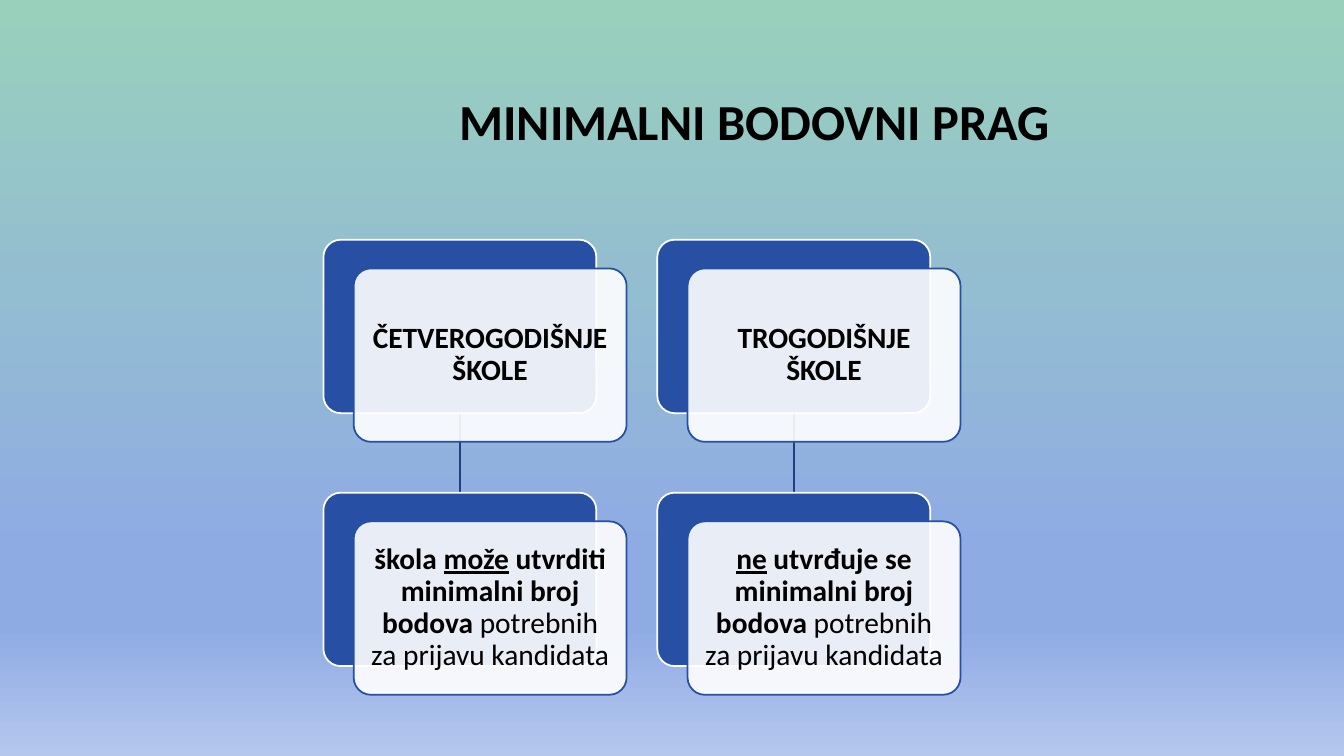
import copy
from dataclasses import dataclass

import pptx
import pptx.dml.color
import pptx.enum.shapes
import pptx.enum.text
import pptx.oxml
import pptx.oxml.ns
import pptx.util

Pt = pptx.util.Pt


@dataclass(frozen=True)
class Theme:
    font: str = "Calibri"
    title_size: float = 36
    card_size: float = 21
    line_width: float = 1.25
    text: str = "000000"
    blue: str = "274FA4"
    link: str = "1F3F83"
    white: str = "FFFFFF"
    front_opacity: int = 90
    background: tuple = ((0, "98D0BC"), (0.74, "8FABE4"), (0.83, "8FABE4"), (1, "B5C7ED"))


THEME = Theme()

BOLD = {"bold": True}
UNDERLINED = {"bold": True, "underline": True}
REQUIREMENT = [("potrebnih za prijavu kandidata", {})]
COLUMNS = [
    (
        [("ČETVEROGODIŠNJE ŠKOLE", BOLD)],
        [("škola ", BOLD), ("može", UNDERLINED),
         (" utvrditi minimalni broj bodova ", BOLD)] + REQUIREMENT,
    ),
    (
        [("TROGODIŠNJE ŠKOLE", BOLD)],
        [("ne", UNDERLINED),
         (" utvrđuje se minimalni broj bodova ", BOLD)] + REQUIREMENT,
    ),
]


def rgb(value):
    return pptx.dml.color.RGBColor.from_string(value)


def write_text(shape, runs, size, margin):
    frame = shape.text_frame
    frame.word_wrap = True
    frame.auto_size = pptx.enum.text.MSO_AUTO_SIZE.NONE
    frame.vertical_anchor = pptx.enum.text.MSO_ANCHOR.MIDDLE
    frame.margin_left = frame.margin_right = Pt(margin)
    frame.margin_top = frame.margin_bottom = Pt(margin)
    paragraph = frame.paragraphs[0]
    paragraph.alignment = pptx.enum.text.PP_ALIGN.CENTER
    paragraph.line_spacing = 0.9
    paragraph.space_before = Pt(0)
    for text, style in runs:
        run = paragraph.add_run()
        run.text = text
        run.font.name = THEME.font
        run.font.size = Pt(size)
        run.font.color.rgb = rgb(THEME.text)
        run.font.bold = style.get("bold", False)
        run.font.underline = style.get("underline", False)


def paint_background(slide):
    fill = slide.background.fill
    fill.gradient()
    fill.gradient_angle = 270
    stop_list = slide.element.xpath(".//a:gsLst")[0]
    while len(stop_list) < len(THEME.background):
        stop_list.append(copy.deepcopy(stop_list[0]))
    for stop, (position, color) in zip(fill.gradient_stops, THEME.background):
        stop.position = position
        stop.color.rgb = rgb(color)


def add_title(slide, left, top, width, height):
    title = slide.shapes.title
    title.left, title.top, title.width, title.height = map(Pt, (left, top, width, height))
    write_text(title, [("MINIMALNI BODOVNI PRAG", BOLD)], THEME.title_size, 5)


def add_panel(slide, left, top, width, height, fill, line):
    panel = slide.shapes.add_shape(
        pptx.enum.shapes.MSO_SHAPE.ROUNDED_RECTANGLE,
        Pt(left), Pt(top), Pt(width), Pt(height))
    panel.shadow.inherit = False
    panel.adjustments[0] = 0.1
    panel.fill.solid()
    panel.fill.fore_color.rgb = rgb(fill)
    panel.line.color.rgb = rgb(line)
    panel.line.width = Pt(THEME.line_width)
    return panel


def add_card(slide, left, top, width, height, runs):
    add_panel(slide, left, top, width, height, THEME.blue, THEME.white)
    front = add_panel(slide, left + 21.6, top + 20.5, width, height, THEME.white, THEME.blue)
    color = front.element.spPr.xpath("./a:solidFill/a:srgbClr")[0]
    alpha = pptx.oxml.parse_xml("<a:alpha %s/>" % pptx.oxml.ns.nsdecls("a"))
    alpha.set("val", str(THEME.front_opacity * 1000))
    color.append(alpha)
    write_text(front, runs, THEME.card_size, 6)


def add_link(slide, x, top, bottom):
    link = slide.shapes.add_connector(
        pptx.enum.shapes.MSO_CONNECTOR.STRAIGHT, Pt(x), Pt(top), Pt(x), Pt(bottom))
    link.line.color.rgb = rgb(THEME.link)
    link.line.width = Pt(THEME.line_width)
    link.element.spPr.append(
        pptx.oxml.parse_xml("<a:effectLst %s/>" % pptx.oxml.ns.nsdecls("a")))


def add_hierarchy(slide, left, top):
    card_width, card_height = 195, 123.9
    column_step, row_step = 238.5, 180.7
    for column, cards in enumerate(COLUMNS):
        x = left + column * column_step
        add_link(slide, x + card_width / 2, top + card_height, top + row_step)
        for row, runs in enumerate(cards):
            add_card(slide, x, top + row * row_step, card_width, card_height, runs)


def main():
    presentation = pptx.Presentation()
    presentation.slide_width = Pt(960)
    presentation.slide_height = Pt(540)
    slide = presentation.slides.add_slide(presentation.slide_layouts[5])
    paint_background(slide)
    add_title(slide, 143, 25, 792, 127)
    add_hierarchy(slide, 231, 171.2)
    presentation.save("out.pptx")


if __name__ == "__main__":
    main()
